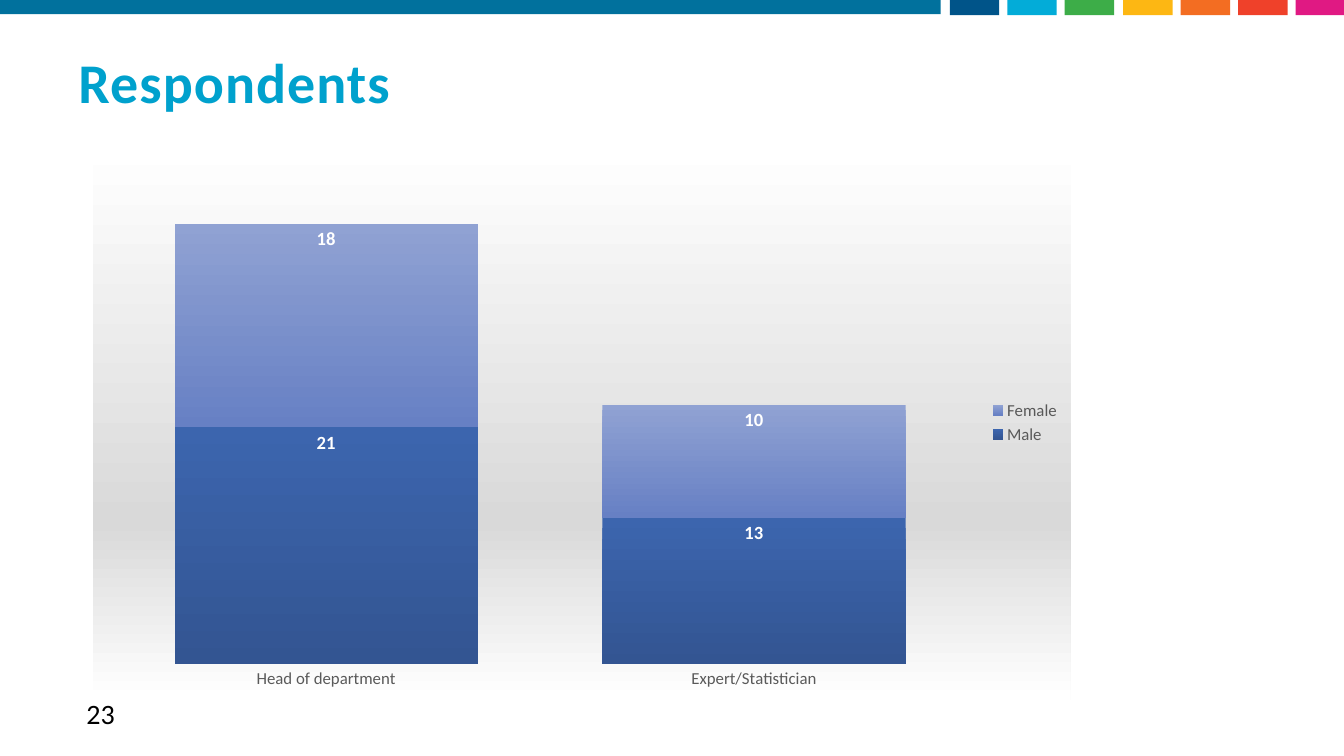
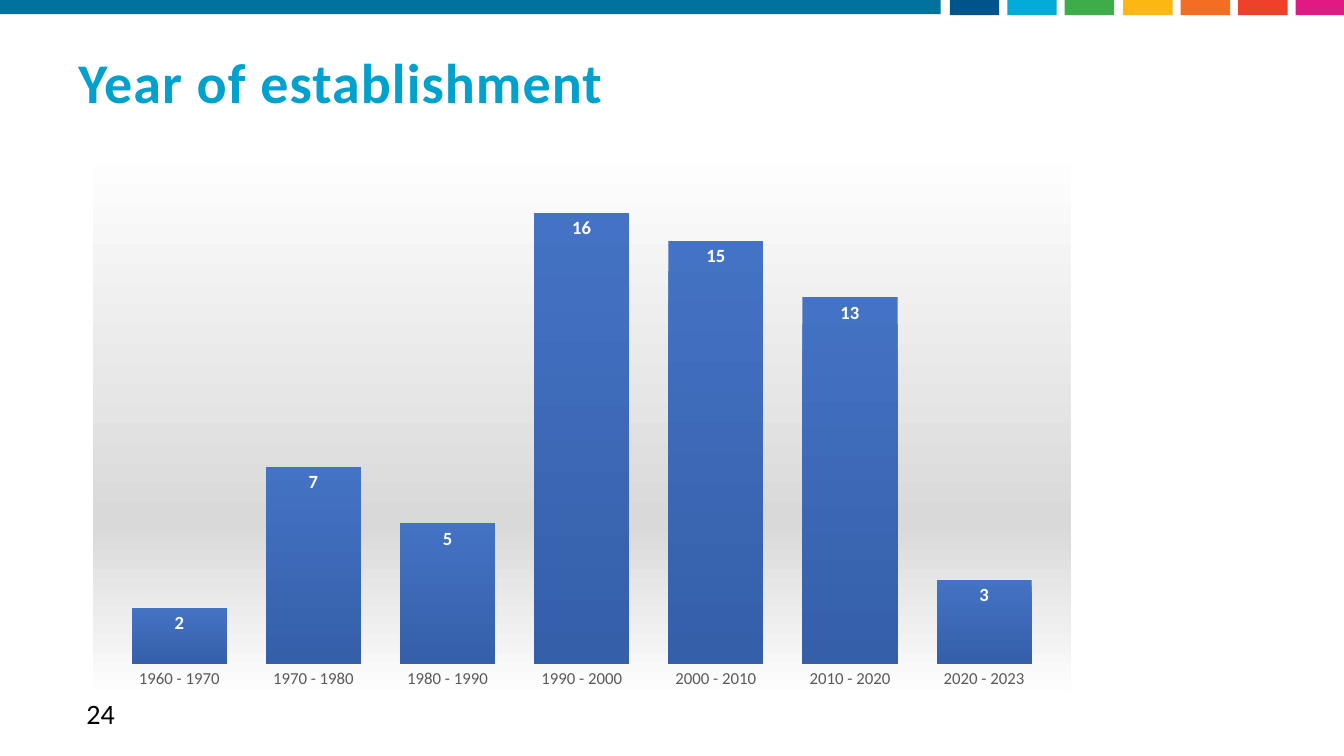
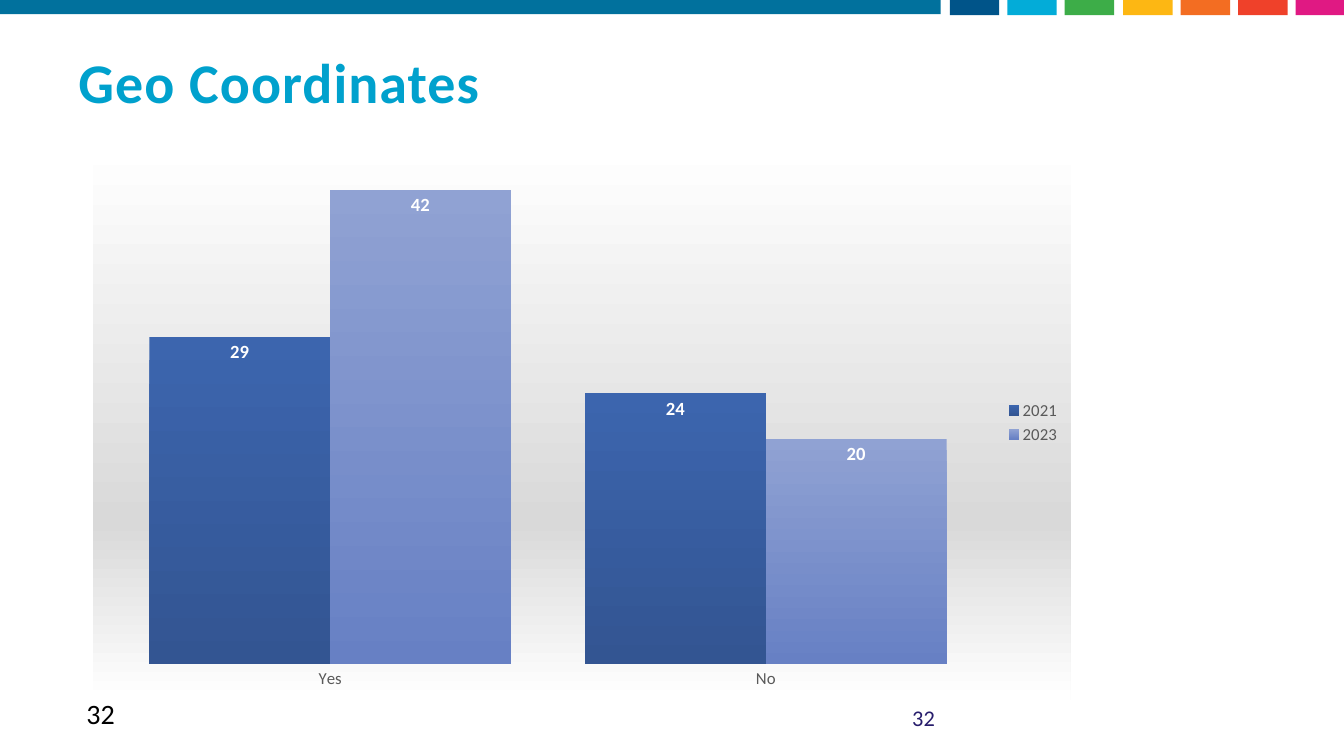
from lxml import etree
from pptx import Presentation
from pptx.chart.data import CategoryChartData
from pptx.dml.color import RGBColor
from pptx.enum.chart import XL_CHART_TYPE, XL_LABEL_POSITION, XL_LEGEND_POSITION, XL_TICK_MARK
from pptx.enum.shapes import MSO_SHAPE
from pptx.enum.text import MSO_ANCHOR, PP_ALIGN
from pptx.oxml.ns import qn
from pptx.util import Pt

CLUSTERED = XL_CHART_TYPE.COLUMN_CLUSTERED
STACKED = XL_CHART_TYPE.COLUMN_STACKED
INSIDE_END = XL_LABEL_POSITION.INSIDE_END
LEGEND_RIGHT = XL_LEGEND_POSITION.RIGHT
NO_TICK = XL_TICK_MARK.NONE
RECT = MSO_SHAPE.RECTANGLE
TOP, MIDDLE = MSO_ANCHOR.TOP, MSO_ANCHOR.MIDDLE
LEFT, CENTER = PP_ALIGN.LEFT, PP_ALIGN.CENTER

PX = 9144
FONT = "Calibri"
TITLE = "00A1CD"
BLACK = "000000"
WHITE = "FFFFFF"
GREY = "595959"
NAVY = "271D6C"
BAND = "01719D"
BLOCKS = ["005489", "03ACD8", "3DAD48", "FDB713", "F36D22", "EF412A", "E01983"]
BACKDROP = [(0, WHITE), (68, "D9D9D9"), (100, WHITE)]
DARK = [(0, "3C65AE"), (100, "335592")]
LIGHT = [(0, "90A2D3"), (100, "6780C4")]
BLUE = [(0, "4472C4"), (100, "355FA9")]


def rgb(color):
    return RGBColor.from_string(color)


def set_font(font, size, color, bold=False):
    font.name = FONT
    font.size = Pt(size)
    font.bold = bold
    font.color.rgb = rgb(color)


def gradient(stops):
    grad = etree.Element(qn("a:gradFill"), rotWithShape="1")
    gs_list = etree.SubElement(grad, qn("a:gsLst"))
    for pos, color in stops:
        gs = etree.SubElement(gs_list, qn("a:gs"), pos=str(pos * 1000))
        etree.SubElement(gs, qn("a:srgbClr"), val=color)
    etree.SubElement(grad, qn("a:lin"), ang="5400000", scaled="0")
    return grad


class Deck:
    def __init__(self):
        self.prs = Presentation()
        self.prs.slide_width = 1333 * PX
        self.prs.slide_height = 750 * PX
        self.slide = None

    def add_slide(self, title, number):
        self.slide = self.prs.slides.add_slide(self.prs.slide_layouts[6])
        self.rect(0, 0, 933, 14, BAND)
        for i, color in enumerate(BLOCKS):
            self.rect(round(942 + i * 57.2), 0, 49, 15, color)
        p = self.text(68, 50, 1113, 73, title, 40, TITLE, bold=True)
        p.line_spacing = 0.9
        p.runs[0].font._element.set("spc", "80")
        self.text(76, 686, 300, 40, number, 20, BLACK)

    def rect(self, x, y, w, h, color):
        sp = self.slide.shapes.add_shape(RECT, x * PX, y * PX, w * PX, h * PX)
        sp.shadow.inherit = False
        sp.fill.solid()
        sp.fill.fore_color.rgb = rgb(color)
        sp.line.fill.background()

    def text(self, x, y, w, h, text, size, color, bold=False, align=LEFT, anchor=TOP):
        sp = self.slide.shapes.add_textbox(x * PX, y * PX, w * PX, h * PX)
        tf = sp.text_frame
        tf.word_wrap = True
        tf.vertical_anchor = anchor
        tf.text = text
        p = tf.paragraphs[0]
        p.alignment = align
        set_font(p.runs[0].font, size, color, bold)
        return p

    def columns(self, kind, cats, series, top):
        data = CategoryChartData()
        data.categories = cats
        for name, values, _ in series:
            data.add_series(name, values)
        frame = self.slide.shapes.add_chart(kind, 92 * PX, 144 * PX, 970 * PX, 550 * PX, data)
        chart = frame.chart
        chart.has_title = False
        set_font(chart.font, 10, BLACK)
        self.backdrop(chart)

        chart.has_legend = len(series) > 1
        if chart.has_legend:
            chart.legend.position = LEGEND_RIGHT
            chart.legend.include_in_layout = False
            set_font(chart.legend.font, 12, GREY)

        axis = chart.category_axis
        axis.major_tick_mark = NO_TICK
        axis.format.line.fill.background()
        set_font(axis.tick_labels.font, 12, GREY)
        axis = chart.value_axis
        axis.visible = False
        axis.has_major_gridlines = False
        axis.minimum_scale = 0
        axis.maximum_scale = top

        plot = chart.plots[0]
        plot.vary_by_categories = False
        plot.gap_width = 41
        plot.overlap = 100 if kind == STACKED else 0
        for s, (_, _, stops) in zip(plot.series, series):
            s.format.line.fill.background()
            s._element.get_or_add_spPr().insert(0, gradient(stops))
            labels = s.data_labels
            labels.show_value = True
            labels.position = INSIDE_END
            set_font(labels.font, 13.3, WHITE, bold=True)

    def backdrop(self, chart):
        sp_pr = etree.Element(qn("c:spPr"))
        sp_pr.append(gradient(BACKDROP))
        line = etree.SubElement(sp_pr, qn("a:ln"))
        etree.SubElement(line, qn("a:noFill"))
        chart._chartSpace.find(qn("c:chart")).addnext(sp_pr)


def main():
    deck = Deck()

    deck.add_slide("Respondents", "23")
    deck.columns(STACKED, ["Head of department", "Expert/Statistician"],
                 [("Male", [21, 13], DARK), ("Female", [18, 10], LIGHT)], 45)

    deck.add_slide("Year of establishment", "24")
    years = [1960, 1970, 1980, 1990, 2000, 2010, 2020, 2023]
    spans = [f"{start} - {end}" for start, end in zip(years, years[1:])]
    deck.columns(CLUSTERED, spans, [("Series 1", [2, 7, 5, 16, 15, 13, 3], BLUE)], 18)

    deck.add_slide("Geo Coordinates", "32")
    deck.text(766, 692, 300, 40, "32", 16, NAVY, align=CENTER, anchor=MIDDLE)
    deck.columns(CLUSTERED, ["Yes", "No"],
                 [("2021", [29, 24], DARK), ("2023", [42, 20], LIGHT)], 45)

    deck.prs.save("out.pptx")


if __name__ == "__main__":
    main()
